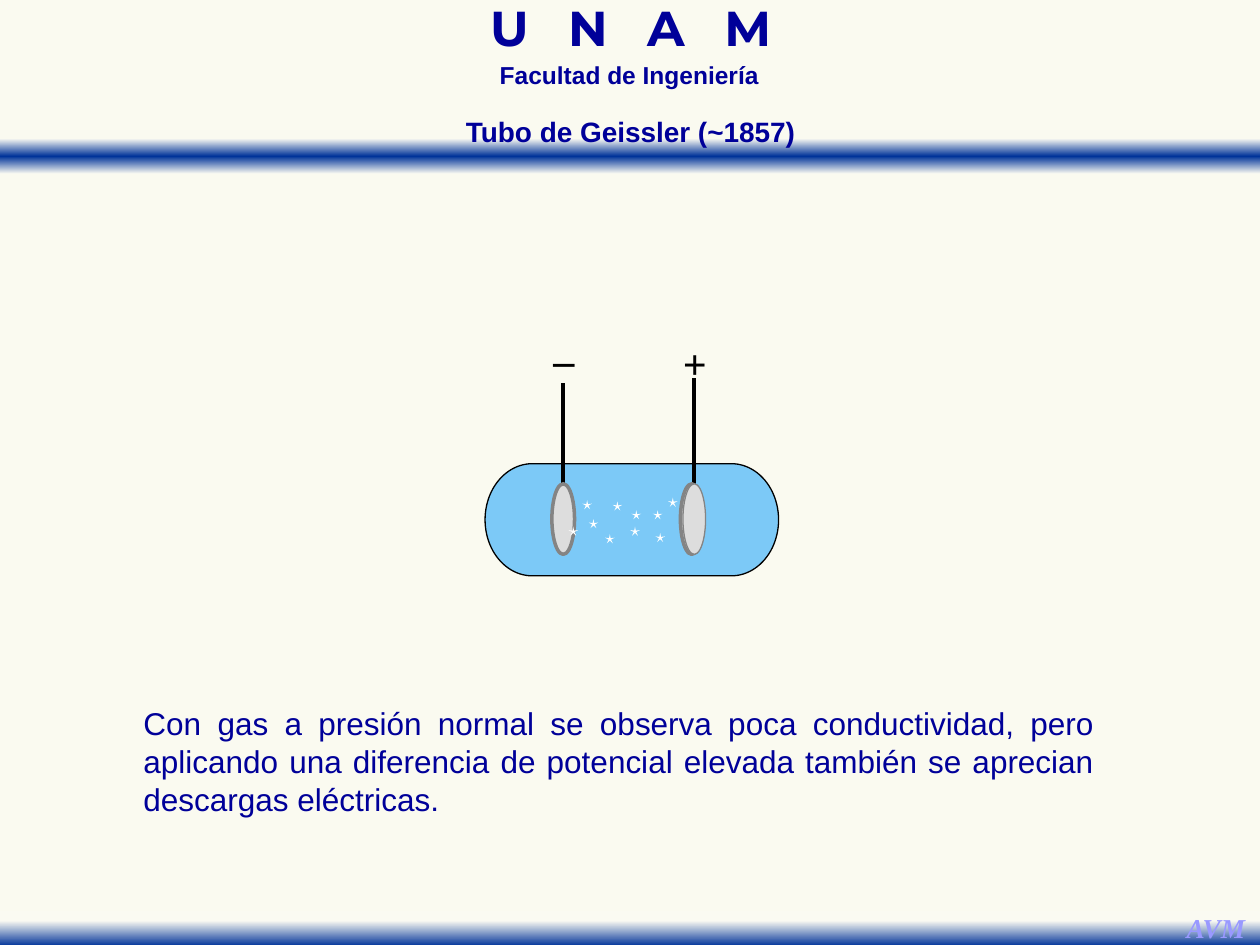
from math import cos, pi, sin

from lxml import etree
from pptx import Presentation
from pptx.dml.color import RGBColor
from pptx.enum.shapes import MSO_CONNECTOR as Line, MSO_SHAPE as Shape
from pptx.enum.text import MSO_AUTO_SIZE as AutoSize, PP_ALIGN as Align
from pptx.oxml import parse_xml
from pptx.oxml.ns import nsdecls, qn
from pptx.util import Inches, Pt

PAPER, NAVY, BAND_BLUE = "FAFAF2", "000099", "003399"
BLACK, WHITE, GREY, PLATE = "000000", "FFFFFF", "848484", "DDDDDD"


def color(hex_code):
    return RGBColor.from_string(hex_code)


class SlideBuilder:
    def __init__(self, slide, font="Arial"):
        self.slide, self.shapes, self.font = slide, slide.shapes, font

    def background(self, hex_code):
        fill = self.slide.background.fill
        fill.solid()
        fill.fore_color.rgb = color(hex_code)

    def paint(self, shape, fill, line=None, line_width=0.75, alpha=None):
        """Set solid fill, its opacity in percent, and outline."""
        shape.shadow.inherit = False
        shape.fill.solid()
        shape.fill.fore_color.rgb = color(fill)
        if alpha is not None:
            tint = shape._element.spPr.find(qn("a:solidFill"))[0]
            etree.SubElement(tint, qn("a:alpha"), val=str(alpha * 1000))
        if line:
            shape.line.color.rgb = color(line)
            shape.line.width = Pt(line_width)
        else:
            shape.line.fill.background()

    def solid(self, kind, left, top, width, height, fill, **style):
        shape = self.shapes.add_shape(
            kind, Inches(left), Inches(top), Inches(width), Inches(height))
        self.paint(shape, fill, **style)

    def band(self, top, height, stops):
        """Full-width bar with a vertical gradient of (percent, colour) stops."""
        bar = self.shapes.add_shape(
            Shape.RECTANGLE, 0, Inches(top), Inches(10), Inches(height))
        self.paint(bar, PAPER)
        marks = "".join(
            f'<a:gs pos="{pos * 1000}"><a:srgbClr val="{hex_code}"/></a:gs>'
            for pos, hex_code in stops)
        gradient = parse_xml(
            f'<a:gradFill {nsdecls("a")} rotWithShape="1"><a:gsLst>{marks}</a:gsLst>'
            '<a:lin ang="5400000" scaled="0"/></a:gradFill>')
        properties = bar._element.spPr
        properties.replace(properties.find(qn("a:solidFill")), gradient)

    def text(self, left, top, width, height, runs, size, hex_code=NAVY, font=None,
             bold=True, italic=None, align=Align.CENTER, spacing=None, wrap=True):
        """Add one paragraph; runs are (wording, letter spacing in points)."""
        frame = self.shapes.add_textbox(
            Inches(left), Inches(top), Inches(width), Inches(height)).text_frame
        frame.word_wrap = wrap
        frame.auto_size = AutoSize.SHAPE_TO_FIT_TEXT
        paragraph = frame.paragraphs[0]
        paragraph.alignment = align
        if spacing:
            paragraph.line_spacing = spacing
        for wording, tracking in runs:
            run = paragraph.add_run()
            run.text = wording
            run.font.name = font or self.font
            run.font.size = Pt(size)
            run.font.bold, run.font.italic = bold, italic
            run.font.color.rgb = color(hex_code)
            if tracking:
                run._r.get_or_add_rPr().set("spc", str(round(tracking * 100)))

    def wire(self, x, top, bottom):
        wire = self.shapes.add_connector(
            Line.STRAIGHT, Inches(x), Inches(bottom), Inches(x), Inches(top))
        wire.line.color.rgb = color(BLACK)
        wire.line.width = Pt(2)
        etree.SubElement(wire._element.spPr, qn("a:effectLst"))

    def spark(self, left, top, radius=0.04, inner=0.26):
        """Thin five-pointed star whose bounds start at left, top."""
        points = []
        for step in range(10):
            reach = radius * (inner if step % 2 else 1)
            angle = step * pi / 5 - pi / 2
            points.append((Inches(left + radius + reach * cos(angle)),
                           Inches(top + radius + reach * sin(angle))))
        outline = self.shapes.build_freeform(*points[0])
        outline.add_line_segments(points[1:], close=True)
        self.paint(outline.convert_to_shape(), WHITE)


def main():
    deck = Presentation()
    deck.slide_width, deck.slide_height = Inches(10), Inches(7.5)
    page = SlideBuilder(deck.slides.add_slide(deck.slide_layouts[6]))
    page.background("FAFAF0")

    # Header and footer
    page.band(1.1, 0.28, [(0, PAPER), (50, BAND_BLUE), (100, PAPER)])
    page.text(3.05, 0.06, 3.91, 0.43, [("U N A ", 7.35), ("M", 0)], 28,
              font="Montserrat", spacing=0.7)
    page.text(3.21, 0.49, 3.57, 0.27, [("Facultad de Ingeniería", 0)], 14, spacing=0.7)
    page.band(7.23, 0.28, [(28, PAPER), (100, BAND_BLUE)])
    page.text(9.31, 7.18, 0.68, 0.37, [("AVM", 0)], 15.6, "9999FF",
              "Times New Roman", italic=True, wrap=False)

    # Discharge tube
    for sign, left, top, width in [("+", 5.32, 2.63, 0.39), ("_", 4.29, 2.49, 0.37)]:
        page.text(left, top, width, 0.5, [(sign, 0)], 24, BLACK,
                  "Times New Roman", wrap=False)
    page.solid(Shape.FLOWCHART_TERMINATOR, 3.85, 3.68, 2.33, 0.89, "0099FF",
               line=BLACK, alpha=50)
    page.wire(4.47, 3.04, 3.86)
    page.wire(5.51, 3, 3.85)
    for left, edge in [(4.38, 2), (5.4, 2), (5.42, 0.75)]:
        page.solid(Shape.OVAL, left, 3.84, 0.18, 0.56, PLATE, line=GREY, line_width=edge)

    # Wording
    page.text(3.58, 0.86, 2.85, 0.37, [("Tubo de Geissler (~1857)", 0)], 16, wrap=False)
    page.text(1.04, 5.54, 7.74, 1.01,
              [("Con gas a presión normal se observa poca conductividad, pero aplicando "
                "una diferencia de potencial elevada también se aprecian descargas "
                "eléctricas.", 0)], 18, bold=None, align=Align.JUSTIFY)

    # Sparks in the gas
    for left, top in [(4.62, 3.97), (4.51, 4.18), (4.8, 4.24), (5.01, 4.05),
                      (5.2, 4.23), (5.3, 3.95), (4.67, 4.12), (5, 4.18),
                      (4.86, 3.98), (5.18, 4.05)]:
        page.spark(left, top)

    deck.save("out.pptx")


if __name__ == "__main__":
    main()
